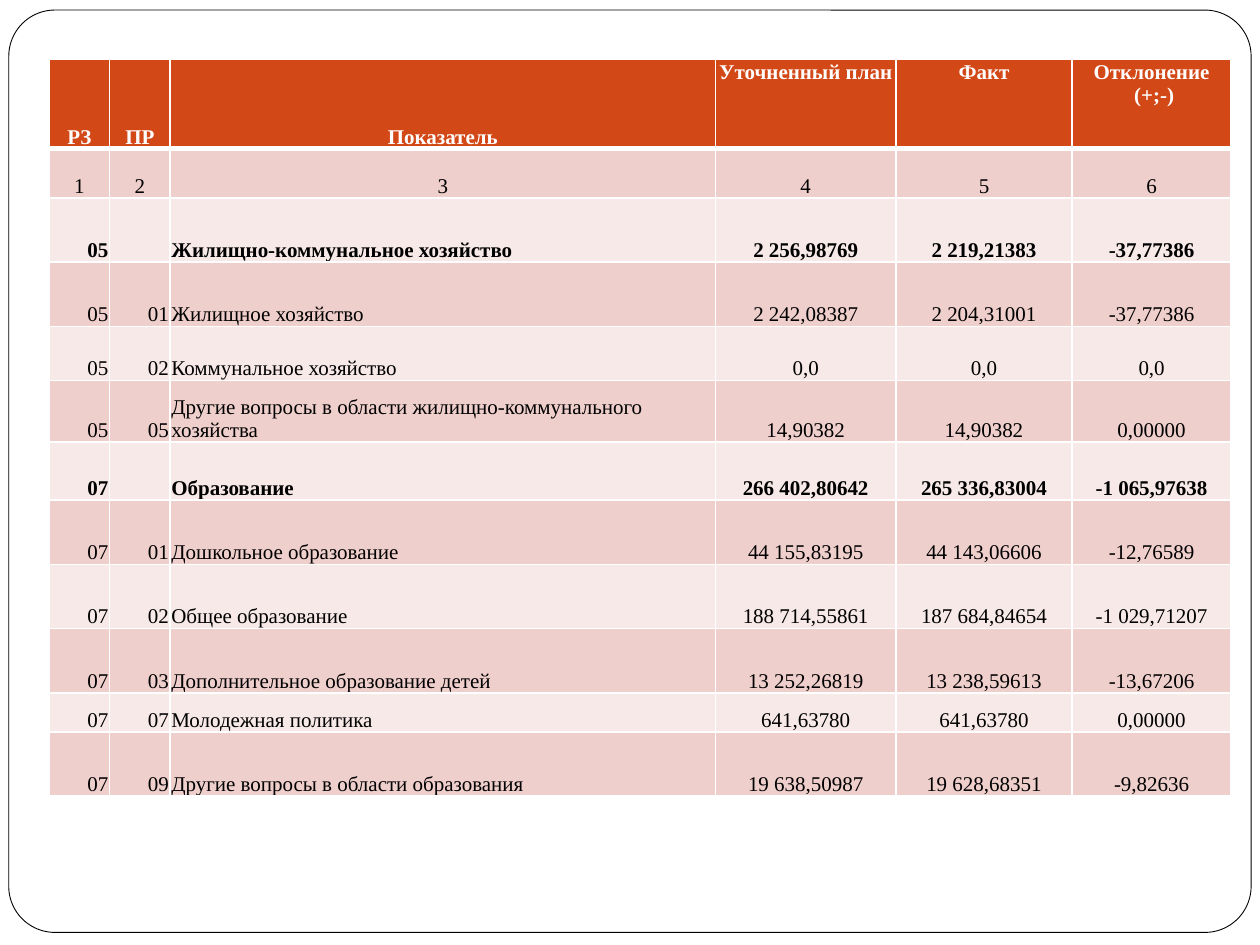
from typing import NamedTuple

from lxml.etree import SubElement
from pptx import Presentation
from pptx.dml.color import RGBColor
from pptx.enum.shapes import MSO_SHAPE as Shape
from pptx.enum.text import MSO_ANCHOR as Anchor, PP_ALIGN as Align
from pptx.oxml.ns import qn
from pptx.slide import Slide
from pptx.table import Table, _Cell as Cell
from pptx.util import Inches, Pt

BLACK = RGBColor(0x00, 0x00, 0x00)
WHITE = RGBColor(0xFF, 0xFF, 0xFF)
ORANGE = RGBColor(0xD3, 0x48, 0x17)
ROSE = RGBColor(0xEF, 0xCF, 0xCC)
PALE_ROSE = RGBColor(0xF7, 0xE9, 0xE8)

FONT = "Times New Roman"
COLUMN_WIDTHS = (0.48, 0.48, 4.33, 1.43, 1.4, 1.26)
BODY_ALIGNS = (Align.RIGHT, Align.RIGHT, Align.LEFT) + (Align.CENTER,) * 3


class BudgetRow(NamedTuple):
    height: float
    section: str
    subsection: str
    indicator: str
    plan: str
    actual: str
    deviation: str

    @property
    def texts(self) -> tuple[str, ...]:
        return self[1:]


class CellStyle(NamedTuple):
    fill: RGBColor
    color: RGBColor
    bold: bool
    align: Align
    anchor: Anchor
    bottom_border: float


ROWS = (
    BudgetRow(0.71, "РЗ", "ПР", "Показатель", "Уточненный план", "Факт", "Отклонение\n (+;-)"),
    BudgetRow(0.39, "1", "2", "3", "4", "5", "6"),
    BudgetRow(0.51, "05", "", "Жилищно-коммунальное хозяйство", "2 256,98769", "2 219,21383", "-37,77386"),
    BudgetRow(0.51, "05", "01", "Жилищное хозяйство", "2 242,08387", "2 204,31001", "-37,77386"),
    BudgetRow(0.43, "05", "02", "Коммунальное хозяйство", "0,0", "0,0", "0,0"),
    BudgetRow(0.49, "05", "05", "Другие вопросы в области жилищно-коммунального хозяйства",
              "14,90382", "14,90382", "0,00000"),
    BudgetRow(0.46, "07", "", "Образование", "266 402,80642", "265 336,83004", "-1 065,97638"),
    BudgetRow(0.51, "07", "01", "Дошкольное образование", "44 155,83195", "44 143,06606", "-12,76589"),
    BudgetRow(0.51, "07", "02", "Общее образование", "188 714,55861", "187 684,84654", "-1 029,71207"),
    BudgetRow(0.51, "07", "03", "Дополнительное образование детей", "13 252,26819", "13 238,59613", "-13,67206"),
    BudgetRow(0.31, "07", "07", "Молодежная политика", "641,63780", "641,63780", "0,00000"),
    BudgetRow(0.51, "07", "09", "Другие вопросы в области образования", "19 638,50987", "19 628,68351", "-9,82636"),
)


def style_for(row_index: int, column_index: int) -> CellStyle:
    if row_index == 0:
        anchor = Anchor.BOTTOM if column_index < 3 else Anchor.TOP
        return CellStyle(ORANGE, WHITE, True, Align.CENTER, anchor, 3)
    fill = ROSE if row_index % 2 else PALE_ROSE
    bold = not ROWS[row_index].subsection
    align = Align.CENTER if row_index == 1 else BODY_ALIGNS[column_index]
    return CellStyle(fill, BLACK, bold, align, Anchor.BOTTOM, 1)


def set_border(cell: Cell, side: str, width: float) -> None:
    line = SubElement(cell._tc.get_or_add_tcPr(), qn(f"a:{side}"), w=str(Pt(width)))
    SubElement(SubElement(line, qn("a:solidFill")), qn("a:srgbClr"), val=str(WHITE))


def fill_cell(cell: Cell, text: str, style: CellStyle, top_border: float) -> None:
    cell.margin_left = cell.margin_top = cell.margin_right = Inches(0.01)
    cell.margin_bottom = 0
    cell.vertical_anchor = style.anchor
    for side, width in (("lnL", 1), ("lnR", 1), ("lnT", top_border), ("lnB", style.bottom_border)):
        set_border(cell, side, width)
    cell.fill.solid()
    cell.fill.fore_color.rgb = style.fill
    cell.text = text
    for para in cell.text_frame.paragraphs:
        para.alignment = style.align
        para.font.name = FONT
        para.font.size = Pt(12)
        para.font.bold = style.bold
        para.font.color.rgb = style.color


def draw_frame(page: Slide) -> None:
    frame = page.shapes.add_shape(
        Shape.ROUNDED_RECTANGLE, Inches(0.07), Inches(0.08), Inches(9.86), Inches(7.32))
    frame.adjustments[0] = 0.05
    frame.shadow.inherit = False
    frame.fill.solid()
    frame.fill.fore_color.rgb = WHITE
    frame.line.color.rgb = BLACK
    frame.line.width = Pt(0.5)


def draw_table(page: Slide) -> Table:
    table = page.shapes.add_table(
        len(ROWS), len(COLUMN_WIDTHS), Inches(0.39), Inches(0.47),
        Inches(sum(COLUMN_WIDTHS)), Inches(sum(row.height for row in ROWS))).table
    table.first_row = False
    table.horz_banding = False
    for column, width in zip(table.columns, COLUMN_WIDTHS):
        column.width = Inches(width)
    for row_index, row in enumerate(ROWS):
        table.rows[row_index].height = Inches(row.height)
        top_border = 3 if row_index == 1 else 1
        for column_index, text in enumerate(row.texts):
            style = style_for(row_index, column_index)
            fill_cell(table.cell(row_index, column_index), text, style, top_border)
    return table


def main() -> None:
    deck = Presentation()
    deck.slide_width = Inches(10)
    deck.slide_height = Inches(7.5)
    page = deck.slides.add_slide(deck.slide_layouts[6])
    draw_frame(page)
    draw_table(page)
    deck.save("out.pptx")


if __name__ == "__main__":
    main()
